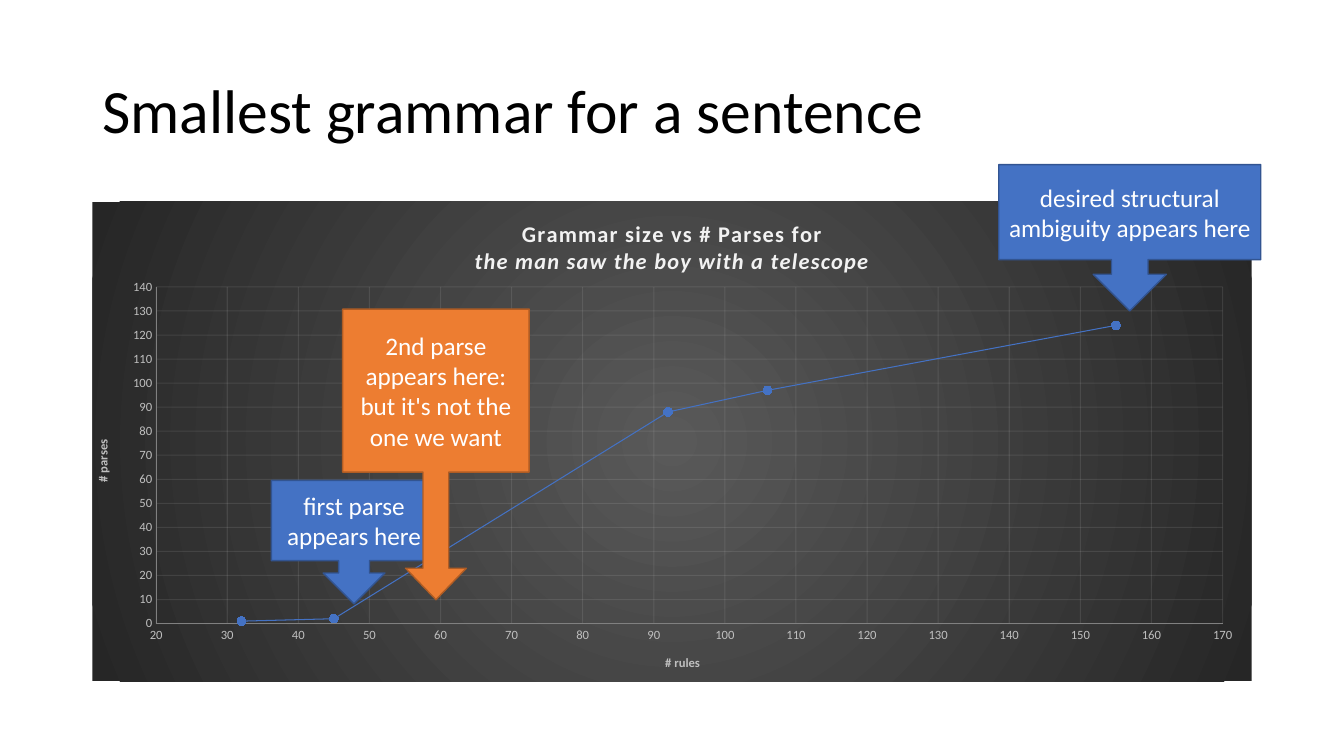
import lxml.etree
import pptx
import pptx.chart.data
import pptx.dml.color
import pptx.enum.chart
import pptx.enum.shapes
import pptx.enum.text
import pptx.oxml
import pptx.oxml.ns
import pptx.util

COLUMNS, ROWS = 160, 90
WHITE, BLACK, BLUE, ORANGE = "FFFFFF", "000000", "4472C4", "ED7D31"
BLUE_EDGE, ORANGE_EDGE, MARKER_BLUE = "325491", "AF5C24", "3E70CA"
AXIS_TEXT, AXIS_LINE, PALE = "BFBFBF", "808080", "F2F2F2"
PARSES_BY_RULES = [(32, 1), (45, 2), (92, 88), (106, 97), (155, 124)]
PLOT_AREA = {"x": 0.055, "y": 0.178, "w": 0.92, "h": 0.702}
CALLOUTS = [
    ("first parse appears here", (32.3, 57.2, 19.7, 14.7), BLUE, BLUE_EDGE, ()),
    ("desired structural ambiguity appears here", (118.9, 19.6, 31.2, 17.4),
     BLUE, BLUE_EDGE, ()),
    ("2nd parse appears here: but it's not the one we want",
     (40.8, 36.8, 22.2, 34.6), ORANGE, ORANGE_EDGE, (0.138, 0.163, 0.169, 0.561)),
]
BACKGROUND = """<c:spPr %s><a:gradFill><a:gsLst>
<a:gs pos="0"><a:srgbClr val="595959"/></a:gs>
<a:gs pos="100000"><a:srgbClr val="262626"/></a:gs></a:gsLst>
<a:path path="circle"><a:fillToRect l="50000" t="50000" r="50000" b="50000"/></a:path>
</a:gradFill><a:ln><a:noFill/></a:ln></c:spPr>""" % pptx.oxml.ns.nsdecls("c", "a")


def color(value):
    return pptx.dml.color.RGBColor.from_string(value)


def apply(target, values):
    for name, value in values.items():
        setattr(target, name, value)


class SlideBuilder:
    """Holds the style and the current slide, and adds each kind of element."""

    def __init__(self, presentation, font_name):
        self.font_name = font_name
        self.column = presentation.slide_width / COLUMNS
        self.row = presentation.slide_height / ROWS
        self.slide = presentation.slides.add_slide(presentation.slide_layouts[6])

    def place(self, box):
        units = (self.column, self.row, self.column, self.row)
        return [pptx.util.Emu(round(value * unit)) for value, unit in zip(box, units)]

    def style_font(self, font, size, shade, **values):
        apply(font, {"name": self.font_name, "size": pptx.util.Pt(size), **values})
        font.color.rgb = color(shade)

    def style_line(self, line, shade, width):
        line.color.rgb = color(shade)
        line.width = pptx.util.Pt(width)

    def fill_text(self, frame, text, size, shade, **values):
        apply(frame, {"word_wrap": True,
                      "vertical_anchor": pptx.enum.text.MSO_ANCHOR.MIDDLE})
        paragraph = frame.paragraphs[0]
        apply(paragraph, values)
        run = paragraph.add_run()
        run.text = text
        self.style_font(run.font, size, shade)

    def heading(self, text, box):
        shape = self.slide.shapes.add_textbox(*self.place(box))
        self.fill_text(shape.text_frame, text, 44, BLACK, line_spacing=0.9)

    def callout(self, text, box, fill, edge, adjustments):
        shape = self.slide.shapes.add_shape(
            pptx.enum.shapes.MSO_SHAPE.DOWN_ARROW_CALLOUT, *self.place(box))
        shape.shadow.inherit = False
        shape.fill.solid()
        shape.fill.fore_color.rgb = color(fill)
        self.style_line(shape.line, edge, 1)
        for index, value in enumerate(adjustments):
            shape.adjustments[index] = value
        self.fill_text(shape.text_frame, text, 18, WHITE,
                       alignment=pptx.enum.text.PP_ALIGN.CENTER)

    def chart(self, points, title_lines, box):
        data = pptx.chart.data.XyChartData()
        series_data = data.add_series("Series 1")
        for rules, parses in points:
            series_data.add_data_point(rules, parses)
        chart = self.slide.shapes.add_chart(
            pptx.enum.chart.XL_CHART_TYPE.XY_SCATTER_LINES, *self.place(box), data).chart
        chart.has_legend = False
        self.style_font(chart.font, 10, BLACK)
        self.chart_title(chart, title_lines)
        self.axis(chart.category_axis, "# rules", 20, 170)
        self.axis(chart.value_axis, "# parses", 0, 140)
        self.series(chart.plots[0])
        self.finish_chart(chart.element)

    def chart_title(self, chart, lines):
        chart.chart_title.include_in_layout = False
        frame = chart.chart_title.text_frame
        for index, line in enumerate(lines):
            paragraph = frame.add_paragraph() if index else frame.paragraphs[0]
            run = paragraph.add_run()
            run.text = line
            self.style_font(run.font, 16, PALE, bold=True, italic=index > 0)

    def axis(self, axis, title, minimum, maximum):
        no_tick = pptx.enum.chart.XL_TICK_MARK.NONE
        apply(axis, {"minimum_scale": minimum, "maximum_scale": maximum,
                     "major_unit": 10, "major_tick_mark": no_tick,
                     "minor_tick_mark": no_tick, "has_major_gridlines": True})
        self.style_font(axis.tick_labels.font, 9, AXIS_TEXT)
        self.style_line(axis.format.line, AXIS_LINE, 0.75)
        self.style_line(axis.major_gridlines.format.line, PALE, 0.75)
        run = axis.axis_title.text_frame.paragraphs[0].add_run()
        run.text = title
        self.style_font(run.font, 9, AXIS_TEXT, bold=True)

    def series(self, plot):
        plot.vary_by_categories = False
        series = plot.series[0]
        series.smooth = False
        self.style_line(series.format.line, BLUE, 0.75)
        marker = series.marker
        apply(marker, {"style": pptx.enum.chart.XL_MARKER_STYLE.CIRCLE, "size": 6})
        marker.format.fill.solid()
        marker.format.fill.fore_color.rgb = color(MARKER_BLUE)
        self.style_line(marker.format.line, BLUE, 0.75)

    def finish_chart(self, element):
        qualify = pptx.oxml.ns.qn
        element.find(qualify("c:chart")).addnext(pptx.oxml.parse_xml(BACKGROUND))
        for shade in element.xpath("c:chart//c:majorGridlines//a:srgbClr"):
            lxml.etree.SubElement(shade, qualify("a:alpha")).set("val", "10000")
        for properties in element.xpath("c:chart/c:title//a:rPr"):
            properties.set("spc", "100")
        for body in element.xpath("c:chart/c:plotArea/c:valAx[2]/c:title//a:bodyPr"):
            body.attrib.update({"rot": "-5400000", "vert": "horz"})
        plot_area = element.xpath("c:chart/c:plotArea")[0]
        for layout in plot_area.findall(qualify("c:layout")):
            plot_area.remove(layout)
        layout = lxml.etree.Element(qualify("c:layout"))
        plot_area.insert(0, layout)
        manual = lxml.etree.SubElement(layout, qualify("c:manualLayout"))
        settings = {"layoutTarget": "inner", "xMode": "edge", "yMode": "edge", **PLOT_AREA}
        for name, value in settings.items():
            lxml.etree.SubElement(manual, qualify("c:" + name)).set("val", str(value))


def main():
    presentation = pptx.Presentation()
    apply(presentation, {"slide_width": pptx.util.Inches(13.33),
                         "slide_height": pptx.util.Inches(7.5)})
    builder = SlideBuilder(presentation, "Calibri")
    builder.heading("Smallest grammar for a sentence", (11, 4.8, 138, 17.4))
    builder.chart(PARSES_BY_RULES,
                  ["Grammar size vs # Parses for", "the man saw the boy with a telescope"],
                  (11, 24, 138, 57.1))
    for callout in CALLOUTS:
        builder.callout(*callout)
    presentation.save("out.pptx")


if __name__ == "__main__":
    main()
